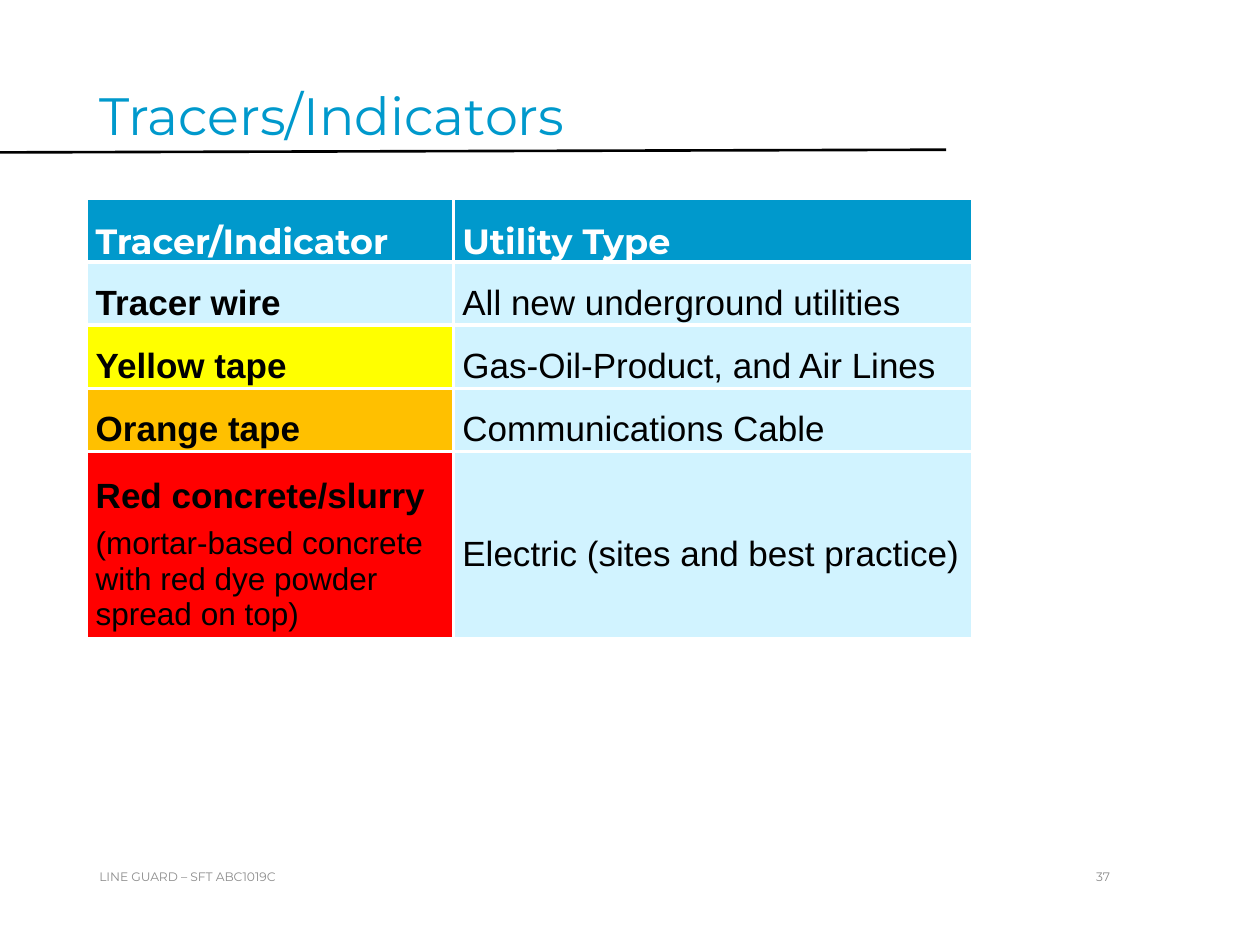
from dataclasses import dataclass

from lxml.etree import SubElement
from pptx import Presentation
from pptx.dml.color import RGBColor as RGB
from pptx.enum.shapes import MSO_CONNECTOR as Connector
from pptx.enum.text import MSO_ANCHOR as Anchor, PP_ALIGN as Align
from pptx.oxml.ns import qn
from pptx.util import Inches, Pt


@dataclass(frozen=True)
class Theme:
    heading_font: str = "Montserrat"
    body_font: str = "Arial"
    blue: str = "0099CC"
    pale: str = "D1F3FF"
    yellow: str = "FFFF00"
    orange: str = "FFC000"
    red: str = "FF0000"
    grey: str = "8C8C8C"
    black: str = "000000"
    white: str = "FFFFFF"
    title_size: float = 30
    table_size: float = 20
    note_size: float = 18
    footer_size: float = 7
    rule: float = 1.5
    inner_border: float = 2.25
    outer_border: float = 1


THEME = Theme()
WIDTH, HEIGHT = 10, 7.5
MARGIN, RIGHT = 0.69, 7.51

# Each row: indicator, its note, utility type, indicator fill, least height
# (a row of height 0 grows to fit its text)
ROWS = [
    ("Tracer/Indicator", "", "Utility Type", THEME.blue, 0),
    ("Tracer wire", "", "All new underground utilities", THEME.pale, 0.5),
    ("Yellow tape", "", "Gas-Oil-Product, and Air Lines", THEME.yellow, 0),
    ("Orange tape", "", "Communications Cable", THEME.orange, 0),
    ("Red concrete/slurry",
     "(mortar-based concrete with red dye powder spread on top)",
     "Electric (sites and best practice)", THEME.red, 0),
]
COLUMN_SHARES = (2.91 / 7.02, 4.11 / 7.02)


def style(paragraph, size, color, font, bold=False):
    for run in paragraph.runs:
        run.font.size = Pt(size)
        run.font.name = font
        run.font.bold = bold
        run.font.color.rgb = RGB.from_string(color)


def add_label(slide, box, text, size, color, align=Align.LEFT, anchor=Anchor.MIDDLE):
    label = slide.shapes.add_textbox(*map(Inches, box))
    frame = label.text_frame
    frame.word_wrap = True
    frame.vertical_anchor = anchor
    frame.text = text
    line = frame.paragraphs[0]
    line.alignment = align
    style(line, size, color, THEME.heading_font)
    return line


def add_heading(slide, box):
    left, top, width, height = box
    # Rule under the title, running in from the slide's edge
    rule = slide.shapes.add_connector(
        Connector.STRAIGHT, 0, Inches(top + 0.76 * height),
        Inches(left + width), Inches(top + 0.73 * height))
    rule.line.color.rgb = RGB.from_string(THEME.black)
    rule.line.width = Pt(THEME.rule)
    SubElement(rule._element.spPr, qn("a:effectLst"))
    # Title
    title = add_label(slide, box, "Tracers/Indicators", THEME.title_size,
                      THEME.blue, anchor=Anchor.TOP)
    title.line_spacing = 0.9


def add_borders(cell, widths):
    properties = cell._tc.get_or_add_tcPr()
    for index, (side, width) in enumerate(widths.items()):
        border = properties.makeelement(qn(f"a:ln{side}"), {"w": str(Pt(width))})
        fill = SubElement(border, qn("a:solidFill"))
        SubElement(fill, qn("a:srgbClr"), val=THEME.white)
        properties.insert(index, border)


def fill_cell(cell, text, note, fill, color, font, bold):
    cell.fill.solid()
    cell.fill.fore_color.rgb = RGB.from_string(fill)
    cell.vertical_anchor = Anchor.MIDDLE
    cell.margin_left = cell.margin_right = Inches(0.07)
    cell.margin_top = cell.margin_bottom = 0
    cell.text_frame.text = text
    entry = cell.text_frame.paragraphs[0]
    entry.line_spacing = 1.5
    entry.space_after = Pt(6)
    style(entry, THEME.table_size, color, font, bold)
    if note:
        remark = cell.text_frame.add_paragraph()
        remark.text = note
        style(remark, THEME.note_size, color, font)


def add_indicator_table(slide, box):
    holder = slide.shapes.add_table(len(ROWS), 2, *map(Inches, box))
    table = holder.table
    for column, share in zip(table.columns, COLUMN_SHARES):
        column.width = Inches(box[2] * share)
    inner, outer = THEME.inner_border, THEME.outer_border
    for r, (indicator, note, utility, fill, height) in enumerate(ROWS):
        table.rows[r].height = Inches(height)
        header = r == 0
        color = THEME.white if header else THEME.black
        font = THEME.heading_font if header else THEME.body_font
        utility_fill = fill if header else THEME.pale
        fill_cell(table.cell(r, 0), indicator, note, fill, color, font, True)
        fill_cell(table.cell(r, 1), utility, "", utility_fill, color, font, header)
        for c in range(2):
            add_borders(table.cell(r, c), {
                "L": inner if c else outer, "R": outer if c else inner,
                "T": outer if header else inner, "B": inner})
    # Setting row heights shrinks the frame, so give it its height again
    holder.height = Inches(box[3])


def add_footer(slide, box):
    left, top, width, height = box
    split = RIGHT - left
    add_label(slide, (left, top, 6, height), "LINE GUARD – SFT ABC1019C",
              THEME.footer_size, THEME.grey)
    # Slide number
    add_label(slide, (RIGHT, top, width - split, height), "37",
              THEME.footer_size, THEME.grey, Align.CENTER)


def main():
    deck = Presentation()
    deck.slide_width, deck.slide_height = Inches(WIDTH), Inches(HEIGHT)
    slide = deck.slides.add_slide(deck.slide_layouts[6])
    add_heading(slide, (MARGIN, 0.67, RIGHT - MARGIN, 0.71))
    add_footer(slide, (MARGIN, 6.76, WIDTH - MARGIN, 0.4))
    add_indicator_table(slide, (MARGIN, 1.58, 7.02, 3.48))
    deck.save("out.pptx")


if __name__ == "__main__":
    main()
